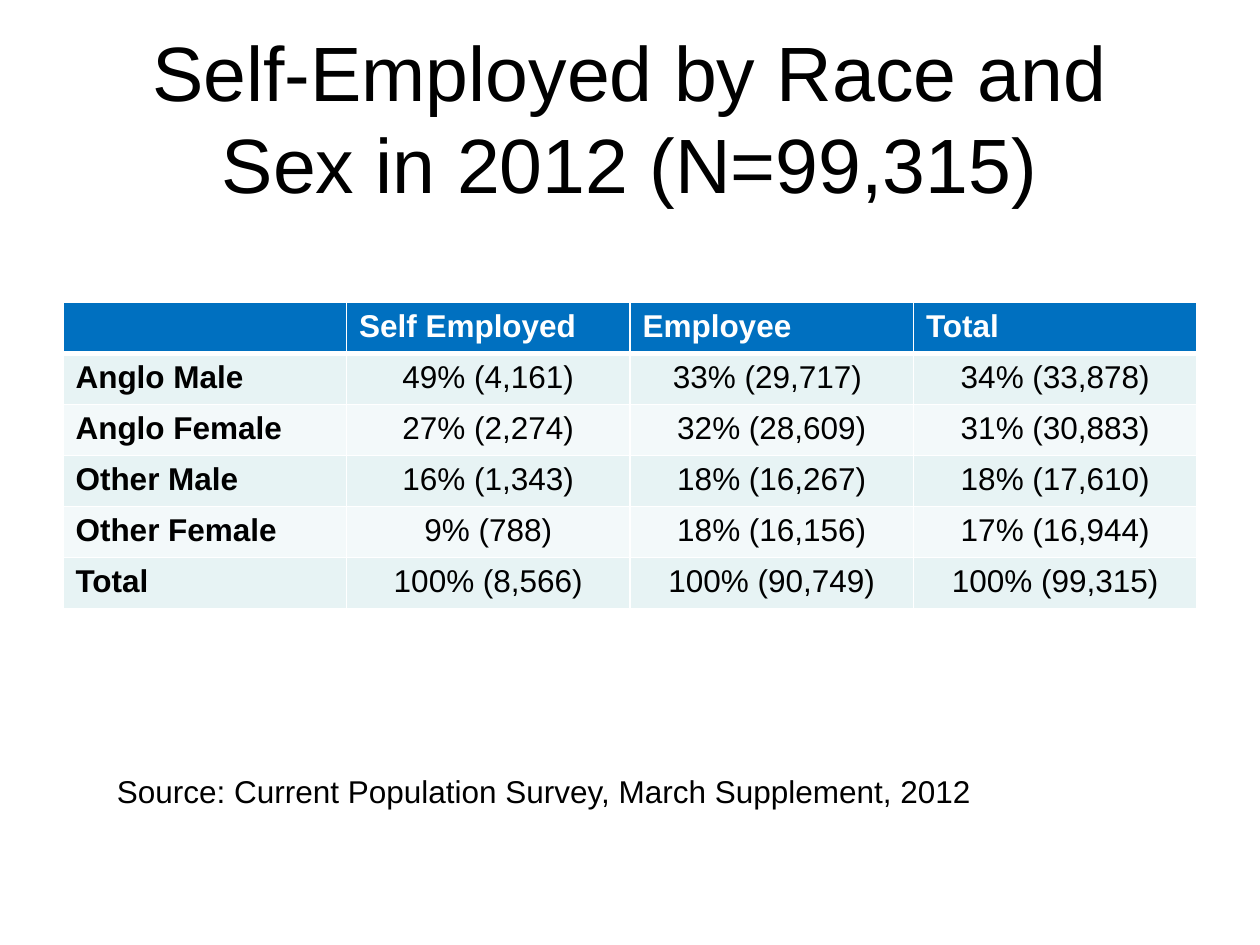
from lxml import etree
from pptx import Presentation
from pptx.dml.color import RGBColor
from pptx.enum.text import MSO_ANCHOR, MSO_AUTO_SIZE, PP_ALIGN
from pptx.oxml.ns import qn
from pptx.util import Inches, Pt

LEFT, CENTER = PP_ALIGN.LEFT, PP_ALIGN.CENTER
MIDDLE = MSO_ANCHOR.MIDDLE
FIT_SHAPE, NO_FIT = MSO_AUTO_SIZE.SHAPE_TO_FIT_TEXT, MSO_AUTO_SIZE.NONE
TITLE_ONLY = 5

COLORS = {
    "text": "000000",
    "white": "FFFFFF",
    "header": "0070C0",
    "odd_row": "E7F3F4",
    "even_row": "F3F9FA",
}

ROWS = [
    ["", "Self Employed", "Employee", "Total"],
    ["Anglo Male", "49% (4,161)", "33% (29,717) ", "34% (33,878)"],
    ["Anglo Female", "27% (2,274)", "32% (28,609)", "31% (30,883)"],
    ["Other Male", "16% (1,343)", "18% (16,267)", "18% (17,610)"],
    ["Other Female", "9% (788)", "18% (16,156)", "17% (16,944)"],
    ["Total", "100% (8,566)", "100% (90,749)", "100% (99,315)"],
]


class SlideBuilder:
    font_name = "Arial"
    body_size = 18
    title_size = 44

    def __init__(self, slide):
        self.slide = slide

    def set_text(self, frame, text, size, color="text", bold=False, align=LEFT):
        paragraph = frame.paragraphs[0]
        paragraph.text = text
        paragraph.alignment = align
        font = paragraph.font
        font.name, font.size, font.bold = self.font_name, Pt(size), bold
        font.color.rgb = RGBColor.from_string(COLORS[color])

    def title(self, text, left, top, width, height):
        shape = self.slide.shapes.title
        shape.left, shape.top = Inches(left), Inches(top)
        shape.width, shape.height = Inches(width), Inches(height)
        frame = shape.text_frame
        frame.vertical_anchor = MIDDLE
        frame.auto_size = NO_FIT
        self.set_text(frame, text, self.title_size, align=CENTER)

    def text(self, text, left, top, width, height):
        box = self.slide.shapes.add_textbox(
            Inches(left), Inches(top), Inches(width), Inches(height))
        frame = box.text_frame
        frame.word_wrap = False
        frame.auto_size = FIT_SHAPE
        self.set_text(frame, text, self.body_size)

    def border(self, cell, side, points):
        line = etree.SubElement(
            cell._tc.get_or_add_tcPr(), qn(f"a:ln{side}"), w=str(Pt(points)))
        fill = etree.SubElement(line, qn("a:solidFill"))
        etree.SubElement(fill, qn("a:srgbClr"), val=COLORS["white"])

    def table(self, rows, left, top, width, height):
        """Draw a table with a header row, bold row labels and banded rows."""
        frame = self.slide.shapes.add_table(
            len(rows), len(rows[0]), Inches(left), Inches(top),
            Inches(width), Inches(height))
        for row_index, row in enumerate(rows):
            is_header = row_index == 0
            band = "odd_row" if row_index % 2 else "even_row"
            for column_index, text in enumerate(row):
                is_label = column_index == 0
                cell = frame.table.cell(row_index, column_index)
                self.set_text(
                    cell.text_frame, text, self.body_size,
                    color="white" if is_header else "text",
                    bold=is_header or is_label,
                    align=LEFT if is_header or is_label else CENTER)
                self.border(cell, "L", 1)
                self.border(cell, "R", 1)
                self.border(cell, "T", 3 if row_index == 1 else 1)
                self.border(cell, "B", 3 if is_header else 1)
                cell.fill.solid()
                cell.fill.fore_color.rgb = RGBColor.from_string(
                    COLORS["header" if is_header else band])


def main():
    presentation = Presentation()
    presentation.slide_width = Inches(10)
    presentation.slide_height = Inches(7.5)
    layout = presentation.slide_layouts[TITLE_ONLY]
    builder = SlideBuilder(presentation.slides.add_slide(layout))

    builder.title("Self-Employed by Race and Sex in 2012 (N=99,315)",
                  0.5, 0.3, 9, 1.25)
    builder.table(ROWS, 0.5, 2.4, 9, 2.43)
    builder.text("Source: Current Population Survey, March Supplement, 2012",
                 0.83, 6.08, 7.04, 0.4)
    presentation.save("out.pptx")


if __name__ == "__main__":
    main()
